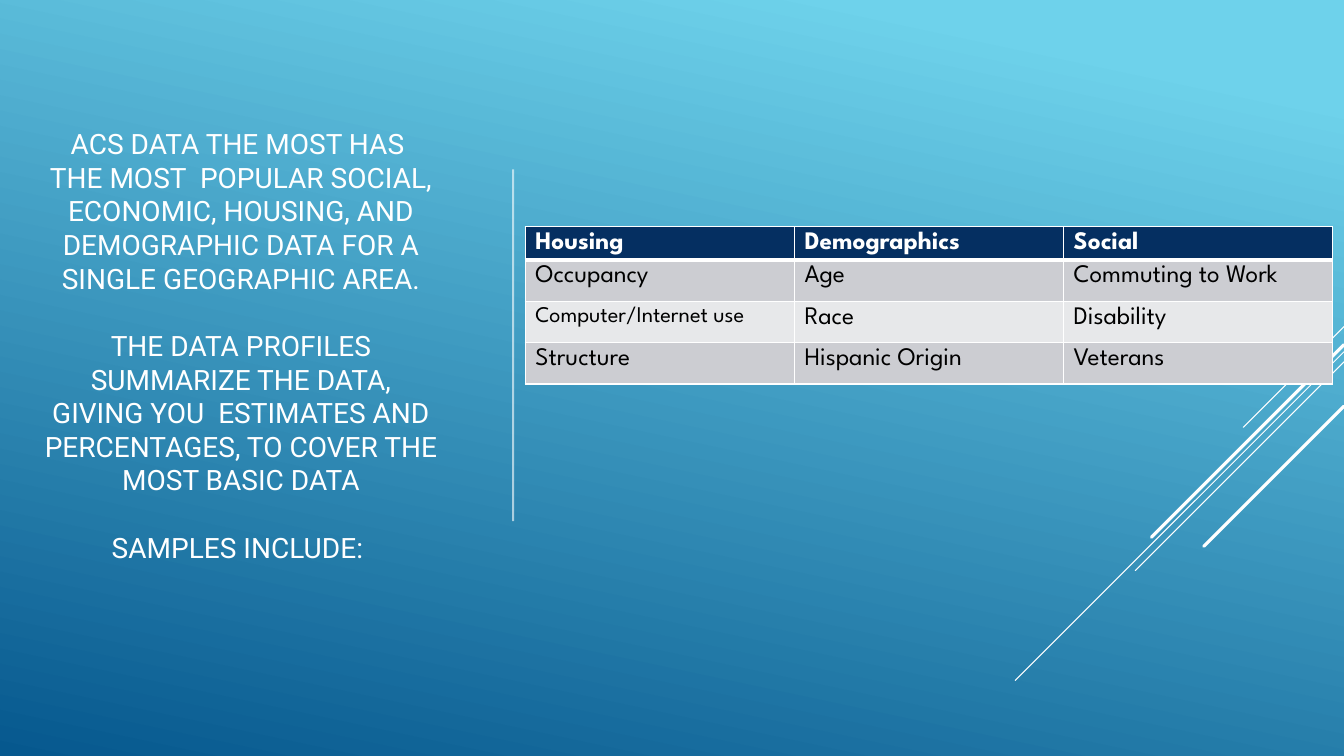
from dataclasses import dataclass

from lxml.etree import SubElement
from pptx import Presentation
from pptx.dml.color import RGBColor
from pptx.enum.shapes import MSO_CONNECTOR
from pptx.enum.text import MSO_ANCHOR, MSO_AUTO_SIZE, PP_ALIGN
from pptx.oxml.ns import qn
from pptx.util import Inches, Pt

MESSAGE = [
    "ACS DATA THE MOST HAS  THE MOST  POPULAR SOCIAL, ECONOMIC, HOUSING, AND DEMOGRAPHIC DATA FOR A SINGLE GEOGRAPHIC AREA.",
    "THE DATA PROFILES SUMMARIZE THE DATA, GIVING YOU  ESTIMATES AND PERCENTAGES, TO COVER THE MOST BASIC DATA",
    "SAMPLES INCLUDE: ",
]
TOPICS = [
    ("Housing", "Demographics", "Social"),
    ("Occupancy", "Age", "Commuting to Work"),
    ("Computer/Internet use", "Race", "Disability"),
    ("Structure", "Hispanic Origin", "Veterans"),
]
SMALL_TOPIC = "Computer/Internet use"
RAYS = [
    (3.24, 1.0, 0.75),
    (3.49, 3.26, 0.75),
    (3.59, 2.07, 0.75),
    (3.42, 1.91, 2.25),
    (4.03, 1.39, 2.25),
]
SLIDE_WIDTH, SLIDE_HEIGHT = 13.33, 7.5
ROW_HEIGHTS = (0.28, 0.41, 0.41, 0.41)
COLUMN_WIDTH = 2.67


@dataclass(frozen=True)
class Theme:
    sky: str = "6ED2EB"
    deep: str = "06588E"
    white: str = "FFFFFF"
    black: str = "000000"
    header: str = "052F61"
    bands: tuple = ("CCCDD2", "E7E8EA")
    message_font: str = "Roboto"
    topic_font: str = "League Spartan"
    message_size: int = 20
    topic_size: int = 18
    small_size: int = 16


THEME = Theme()


def rgb(code):
    return RGBColor.from_string(code)


def add_run(paragraph, text, font, size, color, bold=False):
    run = paragraph.add_run()
    run.text = text
    run.font.name = font
    run.font.size = Pt(size)
    run.font.bold = bold
    run.font.color.rgb = rgb(color)


def add_line(slide, start, end, width):
    line = slide.shapes.add_connector(
        MSO_CONNECTOR.STRAIGHT, *(Inches(value) for value in start + end)
    )
    line.line.color.rgb = rgb(THEME.white)
    line.line.width = Pt(width)
    SubElement(line._element.spPr, qn("a:effectLst"))
    return line


def paint_background(slide):
    fill = slide.background.fill
    fill.gradient()
    fill.gradient_angle = 360 - 102
    stops = ((0.1, THEME.sky), (1, THEME.deep))
    for stop, (position, color) in zip(fill.gradient_stops, stops):
        stop.position = position
        stop.color.rgb = rgb(color)


def write_message(title):
    title.left, title.top = Inches(0.34), Inches(0.75)
    title.width, title.height = Inches(4.1), Inches(5.35)
    frame = title.text_frame
    frame.word_wrap = True
    frame.auto_size = MSO_AUTO_SIZE.NONE
    frame.vertical_anchor = MSO_ANCHOR.MIDDLE
    for index, text in enumerate(MESSAGE):
        paragraph = frame.add_paragraph() if index else frame.paragraphs[0]
        paragraph.alignment = PP_ALIGN.CENTER
        paragraph.space_before = Pt(24 if index else 0)
        add_run(paragraph, text, THEME.message_font, THEME.message_size, THEME.white)


def set_borders(cell, top, bottom):
    properties = cell._tc.get_or_add_tcPr()
    for side, width in (("L", 1), ("R", 1), ("T", top), ("B", bottom)):
        border = SubElement(properties, qn(f"a:ln{side}"), w=str(Pt(width)))
        solid = SubElement(border, qn("a:solidFill"))
        SubElement(solid, qn("a:srgbClr"), val=THEME.white)


def add_topics(slide):
    columns = len(TOPICS[0])
    table = slide.shapes.add_table(
        len(TOPICS), columns, Inches(5.21), Inches(2.25),
        Inches(COLUMN_WIDTH * columns), Inches(sum(ROW_HEIGHTS)),
    ).table
    for column in table.columns:
        column.width = Inches(COLUMN_WIDTH)
    for row, topics in enumerate(TOPICS):
        table.rows[row].height = Inches(ROW_HEIGHTS[row])
        is_header = row == 0
        for column, topic in enumerate(topics):
            cell = table.cell(row, column)
            set_borders(cell, 3 if row == 1 else 1, 3 if is_header else 1)
            cell.fill.solid()
            cell.fill.fore_color.rgb = rgb(
                THEME.header if is_header else THEME.bands[(row - 1) % 2]
            )
            add_run(
                cell.text_frame.paragraphs[0], topic, THEME.topic_font,
                THEME.small_size if topic == SMALL_TOPIC else THEME.topic_size,
                THEME.white if is_header else THEME.black, is_header,
            )


def main():
    deck = Presentation()
    deck.slide_width, deck.slide_height = Inches(SLIDE_WIDTH), Inches(SLIDE_HEIGHT)
    slide = deck.slides.add_slide(deck.slide_layouts[5])
    paint_background(slide)
    for top, reach, width in RAYS:
        ray = add_line(slide, (SLIDE_WIDTH, top), (SLIDE_WIDTH - reach, top + reach), width)
        ray.line._get_or_add_ln().set("cap", "rnd")
    write_message(slide.shapes.title)
    divider = add_line(slide, (5.09, 1.68), (5.09, 5.17), 1.5)
    color = divider._element.spPr.find(".//" + qn("a:srgbClr"))
    SubElement(color, qn("a:alpha"), val="60000")
    add_topics(slide)
    deck.save("out.pptx")


if __name__ == "__main__":
    main()
